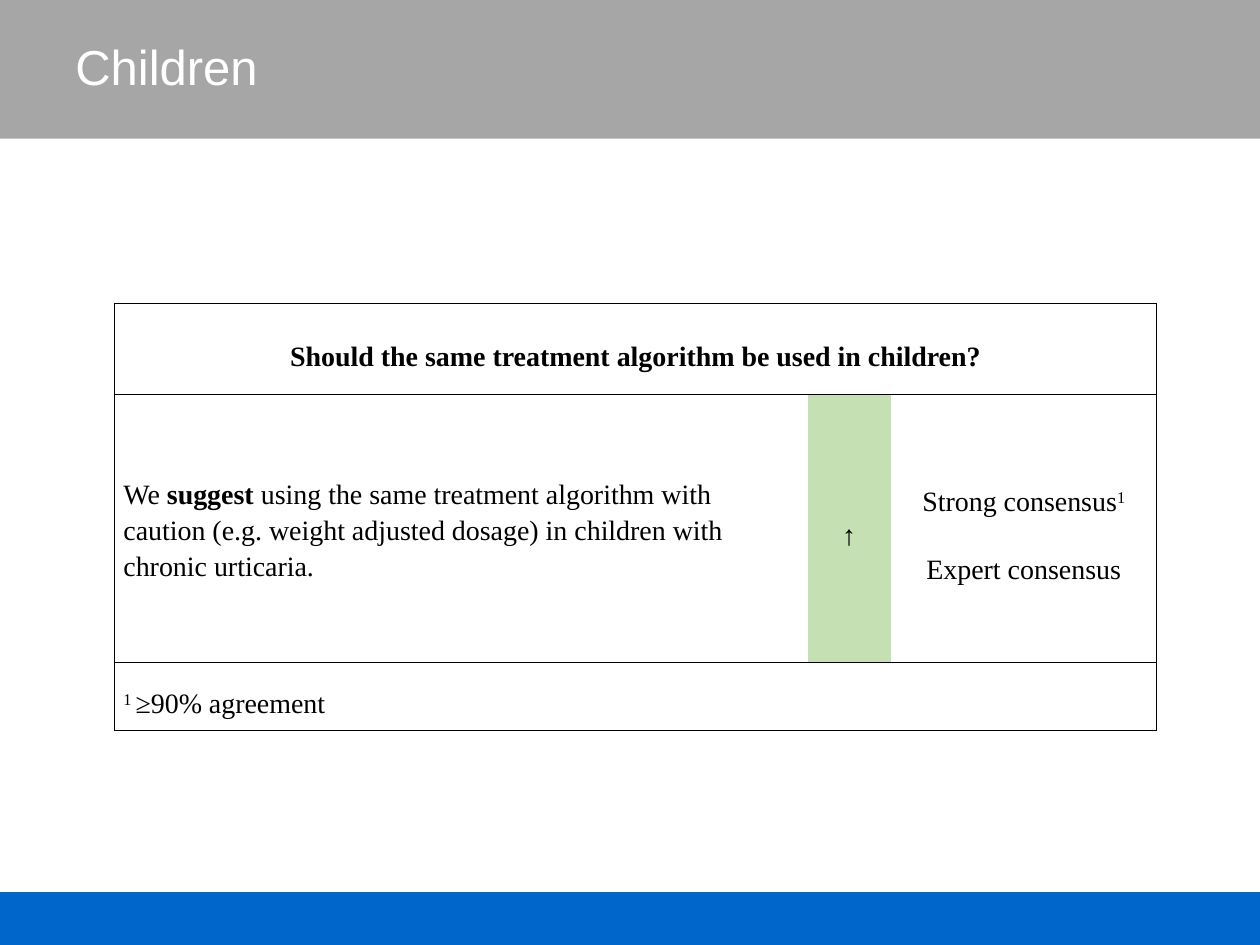
import pptx
import pptx.dml.color
import pptx.enum.shapes
import pptx.enum.text
import pptx.oxml
import pptx.oxml.ns
import pptx.util
from pptx.util import Inches

COLORS = {
    "band": "A6A6A6",
    "footer": "0066CC",
    "recommendation": "C5E0B3",
    "text": "000000",
    "title": "FFFFFF",
    "border": "000000",
}
ALIGN = pptx.enum.text.PP_ALIGN
MIDDLE = pptx.enum.text.MSO_ANCHOR.MIDDLE
COLUMN_WIDTHS = [5.5, 0.66, 2.11]
ROW_HEIGHTS = [0.72, 2.13, 0.54]


def rgb(name):
    return pptx.dml.color.RGBColor.from_string(COLORS[name])


def write_text(paragraph, text, size=16, font="Times New Roman", color="text",
               bold=False, superscript=False):
    run = paragraph.add_run()
    run.text = text
    run.font.size = pptx.util.Pt(size)
    run.font.name = font
    run.font.bold = bold
    run.font.color.rgb = rgb(color)
    if superscript:
        run._r.get_or_add_rPr().set("baseline", "30000")


def add_band(slide, top, height, color):
    shape = slide.shapes.add_shape(
        pptx.enum.shapes.MSO_SHAPE.RECTANGLE,
        Inches(0), Inches(top), Inches(10), Inches(height))
    shape.shadow.inherit = False
    shape.fill.solid()
    shape.fill.fore_color.rgb = rgb(color)
    shape.line.fill.background()


def add_title(slide, text):
    box = slide.shapes.add_textbox(Inches(0.5), Inches(0.22), Inches(9), Inches(0.61))
    frame = box.text_frame
    frame.word_wrap = True
    frame.vertical_anchor = MIDDLE
    write_text(frame.paragraphs[0], text, size=28, font="Arial", color="title")


def set_borders(cell, sides):
    properties = cell._tc.get_or_add_tcPr()
    for side in "LRTB":
        line = pptx.oxml.parse_xml(
            f'<a:ln{side} {pptx.oxml.ns.nsdecls("a")} w="12700"/>')
        if side in sides:
            fill = pptx.oxml.parse_xml(
                f'<a:solidFill {pptx.oxml.ns.nsdecls("a")}>'
                f'<a:srgbClr val="{COLORS["border"]}"/></a:solidFill>')
        else:
            fill = pptx.oxml.parse_xml(f'<a:noFill {pptx.oxml.ns.nsdecls("a")}/>')
        line.append(fill)
        properties.append(line)


def fill_cell(cell, paragraphs, align=ALIGN.CENTER, line_spacing=1.5,
              space=6, space_after=None):
    cell.vertical_anchor = MIDDLE
    cell.margin_left = cell.margin_right = Inches(0.07)
    cell.margin_top = cell.margin_bottom = 0
    frame = cell.text_frame
    for index, runs in enumerate(paragraphs):
        paragraph = frame.add_paragraph() if index else frame.paragraphs[0]
        paragraph.alignment = align
        paragraph.line_spacing = line_spacing
        paragraph.space_before = pptx.util.Pt(space if index else 0)
        paragraph.space_after = pptx.util.Pt(space_after or space)
        for text, text_format in runs:
            write_text(paragraph, text, **text_format)


def add_recommendation_table(slide):
    table = slide.shapes.add_table(
        len(ROW_HEIGHTS), len(COLUMN_WIDTHS), Inches(0.91), Inches(2.41),
        Inches(sum(COLUMN_WIDTHS)), Inches(sum(ROW_HEIGHTS))).table
    table.first_row = table.horz_banding = False
    for column, width in zip(table.columns, COLUMN_WIDTHS):
        column.width = Inches(width)
    for row, height in zip(table.rows, ROW_HEIGHTS):
        row.height = Inches(height)

    for row_index in (0, 2):
        table.cell(row_index, 0).merge(table.cell(row_index, 2))
    for row in table.rows:
        for cell, sides in zip(row.cells, ("LTB", "TB", "RTB")):
            set_borders(cell, "LRTB" if cell.is_merge_origin else sides)
            cell.fill.background()

    bold = {"bold": True}
    raised = {"superscript": True}
    question, footnote = table.cell(0, 0), table.cell(2, 0)
    advice, arrow, consensus = table.rows[1].cells
    fill_cell(question, [
        [("Should the same treatment algorithm be used in children?", bold)]])
    fill_cell(advice, [[
        ("We ", {}), ("suggest", bold),
        (" using the same treatment algorithm with caution (e.g. weight adjusted "
         "dosage) in children with chronic urticaria.", {})]],
        align=ALIGN.LEFT, line_spacing=1.15)
    fill_cell(arrow, [[("↑", bold)]], space_after=8)
    arrow.fill.solid()
    arrow.fill.fore_color.rgb = rgb("recommendation")
    fill_cell(consensus, [
        [("Strong consensus", {}), ("1", raised)],
        [("Expert consensus", {})]])
    fill_cell(footnote, [[("1 ", raised), ("≥90% agreement", {})]],
              align=ALIGN.JUSTIFY, space=3)


def main():
    presentation = pptx.Presentation()
    presentation.slide_width = Inches(10)
    presentation.slide_height = Inches(7.5)
    slide = presentation.slides.add_slide(presentation.slide_layouts[6])
    add_band(slide, 7.08, 0.42, "footer")
    add_band(slide, 0, 1.1, "band")
    add_title(slide, "Children")
    add_recommendation_table(slide)
    presentation.save("out.pptx")


if __name__ == "__main__":
    main()
